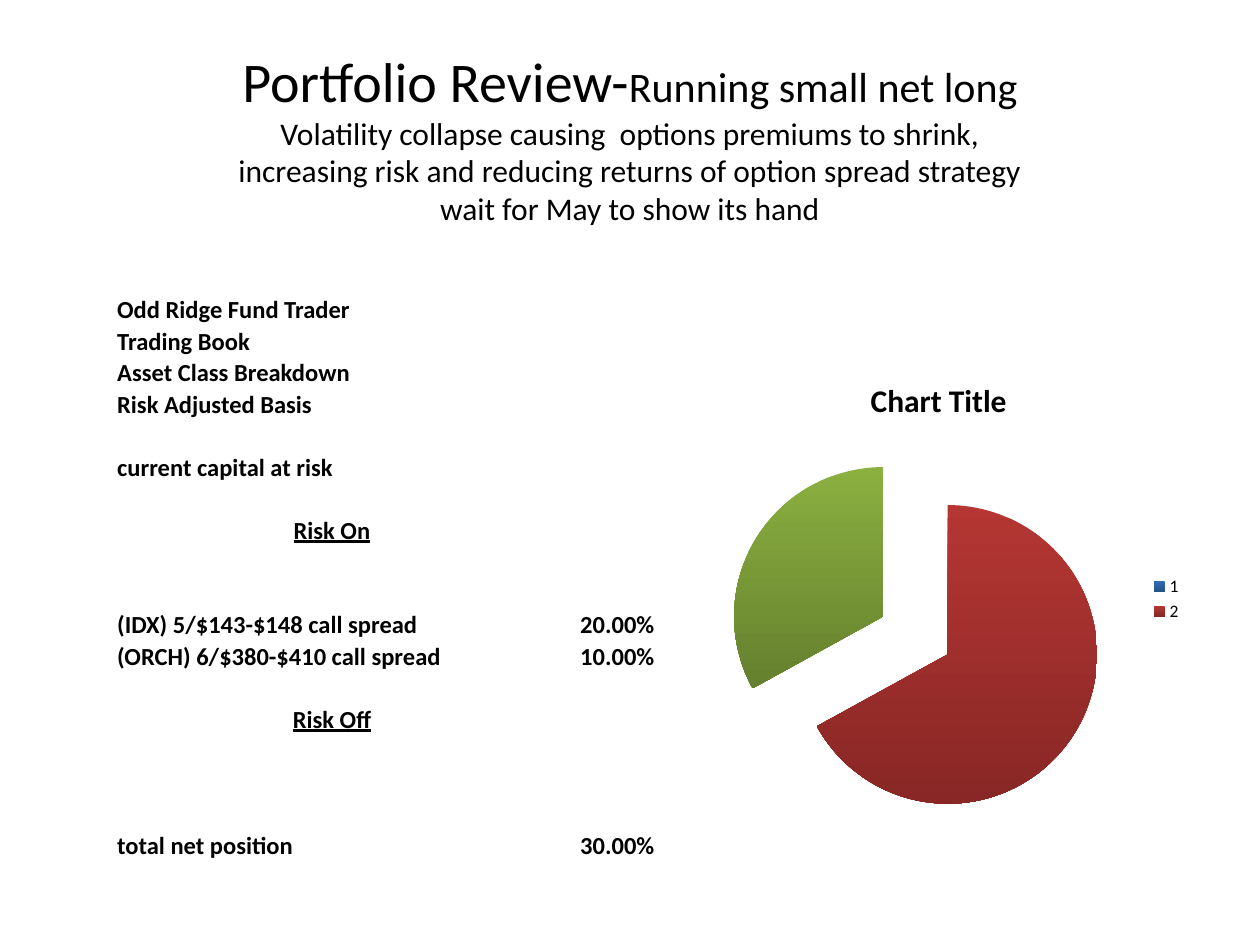
"""Build a portfolio review slide with a risk table and an exploded pie."""
from dataclasses import dataclass
from lxml import etree
from pptx import Presentation
from pptx.chart.data import CategoryChartData
from pptx.dml.color import RGBColor
from pptx.enum.chart import XL_CHART_TYPE, XL_LEGEND_POSITION
from pptx.enum.text import MSO_ANCHOR, PP_ALIGN
from pptx.oxml.ns import qn
from pptx.util import Inches, Pt

PIE, RIGHT = XL_CHART_TYPE.PIE, XL_LEGEND_POSITION.RIGHT
LEFT, MID = PP_ALIGN.LEFT, PP_ALIGN.CENTER
MIDDLE, BOTTOM = MSO_ANCHOR.MIDDLE, MSO_ANCHOR.BOTTOM
FONT = "Calibri"
WIDE, HIGH = 10, 7.5
ROW, COLS, COUNT = 0.25, (3.43, 1.1), 18
INK = {"text": "000000"}
SHADES = {
    0: ("2F6DB5", "24528A"),
    1: ("B53633", "882725"),
    2: ("8BB040", "65802E"),
}
VALUES = (None, 67, 33, None, None, None, None, None)


@dataclass
class Part:
    text: str
    size: int


@dataclass
class Line:
    row: int
    label: str
    share: str = ""
    head: bool = False


TITLE = (
    (Part("Portfolio Review-", 32), Part("Running small net long", 24)),
    (Part("Volatility collapse causing  options premiums to shrink,", 18),),
    (Part("increasing risk and reducing returns of option spread strategy", 18),),
    (Part("wait for May to show its hand", 18),),
)
LINES = (
    Line(0, "Odd Ridge Fund Trader"),
    Line(1, "Trading Book"),
    Line(2, "Asset Class Breakdown"),
    Line(3, "Risk Adjusted Basis"),
    Line(5, "current capital at risk"),
    Line(7, "Risk On", head=True),
    Line(10, "(IDX) 5/$143-$148 call spread", "20.00%"),
    Line(11, "(ORCH) 6/$380-$410 call spread", "10.00%"),
    Line(13, "Risk Off", head=True),
    Line(17, "total net position", "30.00%"),
)


def dress(font, size: int, bold: bool = False) -> None:
    font.name, font.size, font.bold = FONT, Pt(size), bold
    font.color.rgb = RGBColor.from_string(INK["text"])


def box(left: float, top: float, width: float, height: float) -> list:
    return [Inches(v) for v in (left, top, width, height)]


def add_title(slide) -> None:
    frame = slide.shapes.add_textbox(
        *box(0.05 * WIDE, 0.25, 0.9 * WIDE, 1.67)).text_frame
    frame.word_wrap, frame.vertical_anchor = True, MIDDLE
    para = frame.paragraphs[0]
    para.alignment = MID
    for num, parts in enumerate(TITLE):
        if num:
            para.add_line_break()
        for part in parts:
            run = para.add_run()
            run.text = part.text
            dress(run.font, part.size)


def fill_cell(cell, text: str, align, under: bool) -> None:
    cell.fill.background()
    cell.vertical_anchor = BOTTOM
    cell.margin_left = cell.margin_right = cell.margin_top = Inches(0.01)
    cell.margin_bottom = 0
    cell.text = text
    para = cell.text_frame.paragraphs[0]
    para.alignment = align
    dress(para.font, 14, True)
    para.font.underline = under


def add_book(slide) -> None:
    table = slide.shapes.add_table(
        COUNT, len(COLS), *box(0.92, 2.33, sum(COLS), ROW * COUNT)).table
    table.first_row = table.horz_banding = False
    for col, width in zip(table.columns, COLS):
        col.width = Inches(width)
    known = {line.row: line for line in LINES}
    for row in range(COUNT):
        line = known.get(row, Line(row, ""))
        fill_cell(table.cell(row, 0), line.label,
                  MID if line.head else LEFT, line.head)
        fill_cell(table.cell(row, 1), line.share, MID, False)


def add_node(base, tag: str, value):
    node = etree.SubElement(base, qn(tag))
    node.set("val", str(value))
    return node


def place(plot, **share: float) -> None:
    for old in plot.findall(qn("c:layout")):
        plot.remove(old)
    layout = etree.Element(qn("c:layout"))
    plot.insert(0, layout)
    manual = etree.SubElement(layout, qn("c:manualLayout"))
    add_node(manual, "c:layoutTarget", "inner")
    for mode in ("xMode", "yMode"):
        add_node(manual, f"c:{mode}", "edge")
    for name, value in share.items():
        add_node(manual, f"c:{name}", value)


def hide_keys(legend, first: int, last: int) -> None:
    for num in range(first, last):
        entry = etree.Element(qn("c:legendEntry"))
        add_node(entry, "c:idx", num)
        add_node(entry, "c:delete", 1)
        legend.insert(1 + num - first, entry)


def add_pie(slide) -> None:
    data = CategoryChartData()
    data.categories = [str(num + 1) for num in range(len(VALUES))]
    data.add_series("Series 1", VALUES)
    chart = slide.shapes.add_chart(PIE, *box(5.42, 2.83, 4.06, 3.85), data).chart
    dress(chart.font, 10)
    chart.has_title = chart.has_legend = True
    para = chart.chart_title.text_frame.paragraphs[0]
    para.text = "Chart Title"
    dress(para.runs[0].font, 18, True)
    chart.legend.position = RIGHT
    chart.legend.include_in_layout = False
    root = chart.element
    hide_keys(root.find(".//" + qn("c:legend")), 2, len(VALUES))
    place(root.find(".//" + qn("c:plotArea")), x=0.09, y=0.19, w=0.73, h=0.77)
    chart.plots[0].vary_by_categories = True
    series = chart.plots[0].series[0]
    for num, pair in SHADES.items():
        fill = series.points[num].format.fill
        fill.gradient()
        fill.gradient_angle = 270
        for stop, shade in zip(fill.gradient_stops, pair):
            stop.color.rgb = RGBColor.from_string(shade)
    first = root.find(".//" + qn("c:dPt"))
    burst = etree.Element(qn("c:explosion"))
    burst.set("val", "25")
    first.addprevious(burst)


def main() -> None:
    deck = Presentation()
    deck.slide_width, deck.slide_height = Inches(WIDE), Inches(HIGH)
    slide = deck.slides.add_slide(deck.slide_layouts[6])
    add_title(slide)
    add_pie(slide)
    add_book(slide)
    deck.save("out.pptx")


if __name__ == "__main__":
    main()
